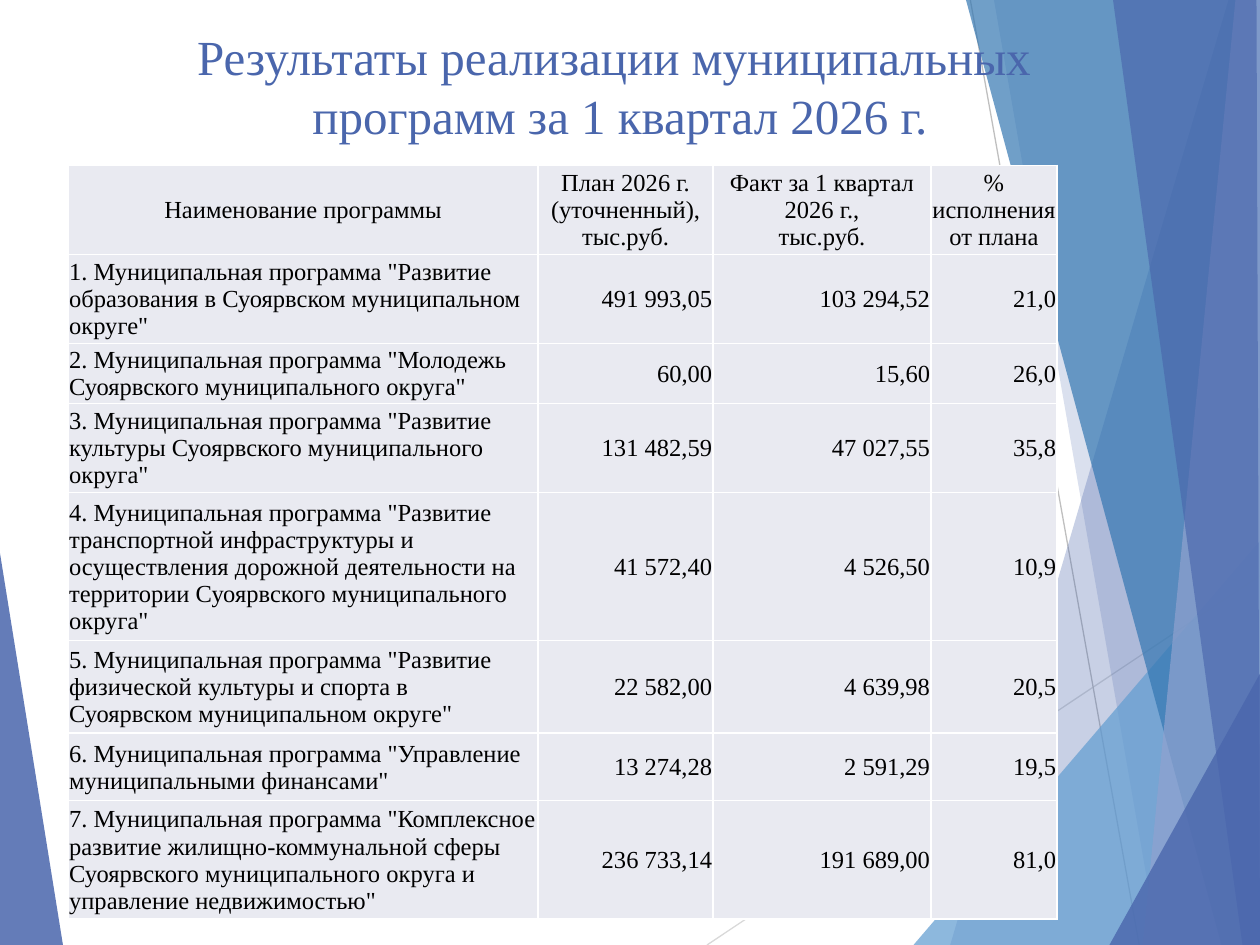
from dataclasses import dataclass

from lxml import etree
from pptx import Presentation
from pptx.dml.color import RGBColor
from pptx.enum import shapes, text
from pptx.oxml import ns, xmlchemy
from pptx.util import Pt

WIDTH, HEIGHT = 720, 540
FONT = "Times New Roman"
BLUE = RGBColor(0x4A, 0x66, 0xAC)
SKY = RGBColor(0x62, 0x9D, 0xD1)
TEAL = RGBColor(0x34, 0x77, 0xB2)
LAVENDER = RGBColor(0x90, 0xA2, 0xCF)
LIGHT_GRAY = RGBColor(0xD9, 0xD9, 0xD9)
GRAY = RGBColor(0xBF, 0xBF, 0xBF)
CELL_FILL = RGBColor(0xE9, 0xEA, 0xF1)
WHITE = RGBColor(0xFF, 0xFF, 0xFF)
BLACK = RGBColor(0, 0, 0)

Point = tuple[float, float]


@dataclass
class Facet:
    points: list[Point]
    color: RGBColor
    opacity: int


@dataclass
class Ray:
    start: Point
    end: Point
    color: RGBColor


@dataclass
class Program:
    name: str
    plan: str
    fact: str
    percent: str
    height: float


LEFT_FACET = Facet([(0, 316), (35.5, HEIGHT), (0, HEIGHT)], BLUE, 85)
RAYS = [
    Ray((404, HEIGHT), (WIDTH, 329), LIGHT_GRAY),
    Ray((554.5, 0), (651, HEIGHT), GRAY),
]
RIGHT_EDGE = [(WIDTH, HEIGHT), (WIDTH, 0)]
RIGHT_FACETS = [
    Facet([(702, 0), (543, HEIGHT), *RIGHT_EDGE], BLUE, 30),
    Facet([(567.5, 0), (661.5, HEIGHT), *RIGHT_EDGE], BLUE, 20),
    Facet([(522.5, HEIGHT), (WIDTH, 309), (WIDTH, HEIGHT)], SKY, 72),
    Facet([(552, 0), (698.5, HEIGHT), *RIGHT_EDGE], TEAL, 70),
    Facet([(706.5, 0), (653, HEIGHT), *RIGHT_EDGE], LAVENDER, 70),
    Facet([(636, 0), (710, HEIGHT), (WIDTH, HEIGHT), (718.5, 0)], BLUE, 65),
    Facet([(634.5, HEIGHT), (WIDTH, 385), (WIDTH, HEIGHT)], BLUE, 80),
]

TITLE = "Результаты реализации муниципальных \vпрограмм за 1 квартал 2026 г."
COLUMN_WIDTHS = [268.5, 100, 124.5, 72]
HEADER_HEIGHT = 49
HEADERS = [
    "Наименование программы",
    "План 2026 г.\n(уточненный),\nтыс.руб.",
    "Факт за 1 квартал 2026 г.,\nтыс.руб.",
    "% исполнения от плана",
]
PROGRAMS = [
    Program('"Развитие образования в Суоярвском муниципальном округе"',
            "491 993,05", "103 294,52", "21,0", 49),
    Program('"Молодежь Суоярвского муниципального округа"',
            "60,00", "15,60", "26,0", 33),
    Program('"Развитие культуры Суоярвского муниципального округа"',
            "131 482,59", "47 027,55", "35,8", 49),
    Program('"Развитие транспортной инфраструктуры и осуществления дорожной '
            'деятельности на территории Суоярвского муниципального округа"',
            "41 572,40", "4 526,50", "10,9", 81.5),
    Program('"Развитие физической культуры и спорта в Суоярвском '
            'муниципальном округе"',
            "22 582,00", "4 639,98", "20,5", 53),
    Program('"Управление муниципальными финансами"',
            "13 274,28", "2 591,29", "19,5", 38.5),
    Program('"Комплексное развитие жилищно-коммунальной сферы Суоярвского '
            'муниципального округа и управление недвижимостью"',
            "236 733,14", "191 689,00", "81,0", 65.5),
]


def draw_facet(s, facet: Facet) -> None:
    builder = s.shapes.build_freeform(*facet.points[0], scale=Pt(1))
    builder.add_line_segments(facet.points[1:], close=True)
    sp = builder.convert_to_shape()
    sp.shadow.inherit = False
    sp.fill.solid()
    sp.fill.fore_color.rgb = facet.color
    sp.line.fill.background()
    color = sp._element.spPr.find(".//" + ns.qn("a:srgbClr"))
    etree.SubElement(color, ns.qn("a:alpha"), val=str(facet.opacity * 1000))


def draw_ray(s, ray: Ray) -> None:
    line = s.shapes.add_connector(
        shapes.MSO_CONNECTOR.STRAIGHT, *map(Pt, ray.start + ray.end))
    line.line.color.rgb = ray.color
    line.line.width = Pt(0.75)
    etree.SubElement(line._element.spPr, ns.qn("a:effectLst"))


def style_paragraph(p, size: float, color: RGBColor, align) -> None:
    p.alignment = align
    p.font.name = FONT
    p.font.size = Pt(size)
    p.font.color.rgb = color


def draw_title(s) -> None:
    tf = s.shapes.add_textbox(Pt(39.5), Pt(11.5), Pt(629.5), Pt(103.5)).text_frame
    tf.word_wrap = True
    p = tf.paragraphs[0]
    p.text = TITLE
    style_paragraph(p, 28, BLUE, text.PP_ALIGN.CENTER)


def add_borders(cell) -> None:
    """Put a white 1 pt line on all four sides, ahead of the cell fill."""
    tc_pr = cell._tc.get_or_add_tcPr()
    for i, side in enumerate(("lnL", "lnR", "lnT", "lnB")):
        ln = etree.Element(ns.qn(f"a:{side}"), w=str(Pt(1)))
        fill = etree.SubElement(ln, ns.qn("a:solidFill"))
        etree.SubElement(fill, ns.qn("a:srgbClr"), val=str(WHITE))
        tc_pr.insert(i, ln)


def fill_cell(cell, content: str, align) -> None:
    cell.fill.solid()
    cell.fill.fore_color.rgb = CELL_FILL
    add_borders(cell)
    cell.vertical_anchor = text.MSO_ANCHOR.MIDDLE
    cell.margin_left = cell.margin_right = cell.margin_top = Pt(0.5)
    cell.margin_bottom = 0
    cell.text = content
    for p in cell.text_frame.paragraphs:
        style_paragraph(p, 14, BLACK, align)


def draw_table(s) -> None:
    heights = [HEADER_HEIGHT] + [program.height for program in PROGRAMS]
    table = s.shapes.add_table(
        len(heights), len(COLUMN_WIDTHS), Pt(39), Pt(94.5),
        Pt(sum(COLUMN_WIDTHS)), Pt(sum(heights))).table
    table.first_row = table.horz_banding = False
    for column, width in zip(table.columns, COLUMN_WIDTHS):
        column.width = Pt(width)
    for row, height in zip(table.rows, heights):
        row.height = Pt(height)
    for c, header in enumerate(HEADERS):
        fill_cell(table.cell(0, c), header, text.PP_ALIGN.CENTER)
    for r, program in enumerate(PROGRAMS, 1):
        name = f"{r}. Муниципальная программа {program.name}"
        fill_cell(table.cell(r, 0), name, text.PP_ALIGN.LEFT)
        values = (program.plan, program.fact, program.percent)
        for c, value in enumerate(values, 1):
            fill_cell(table.cell(r, c), value, text.PP_ALIGN.RIGHT)


def main() -> None:
    prs = Presentation()
    prs.slide_width, prs.slide_height = Pt(WIDTH), Pt(HEIGHT)
    s = prs.slides.add_slide(prs.slide_layouts[6])
    draw_facet(s, LEFT_FACET)
    for ray in RAYS:
        draw_ray(s, ray)
    for facet in RIGHT_FACETS:
        draw_facet(s, facet)
    draw_title(s)
    draw_table(s)
    prs.save("out.pptx")


if __name__ == "__main__":
    main()
